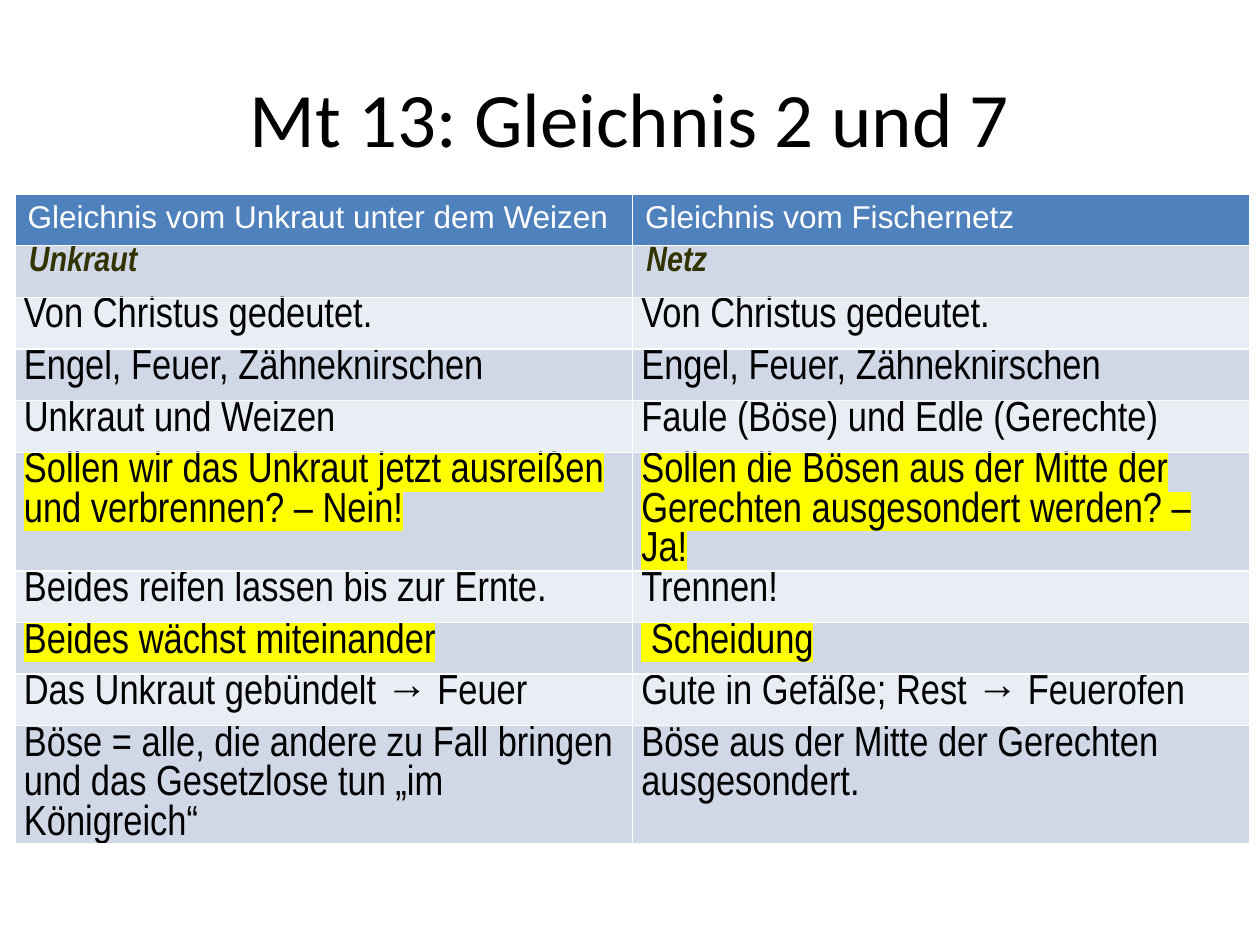
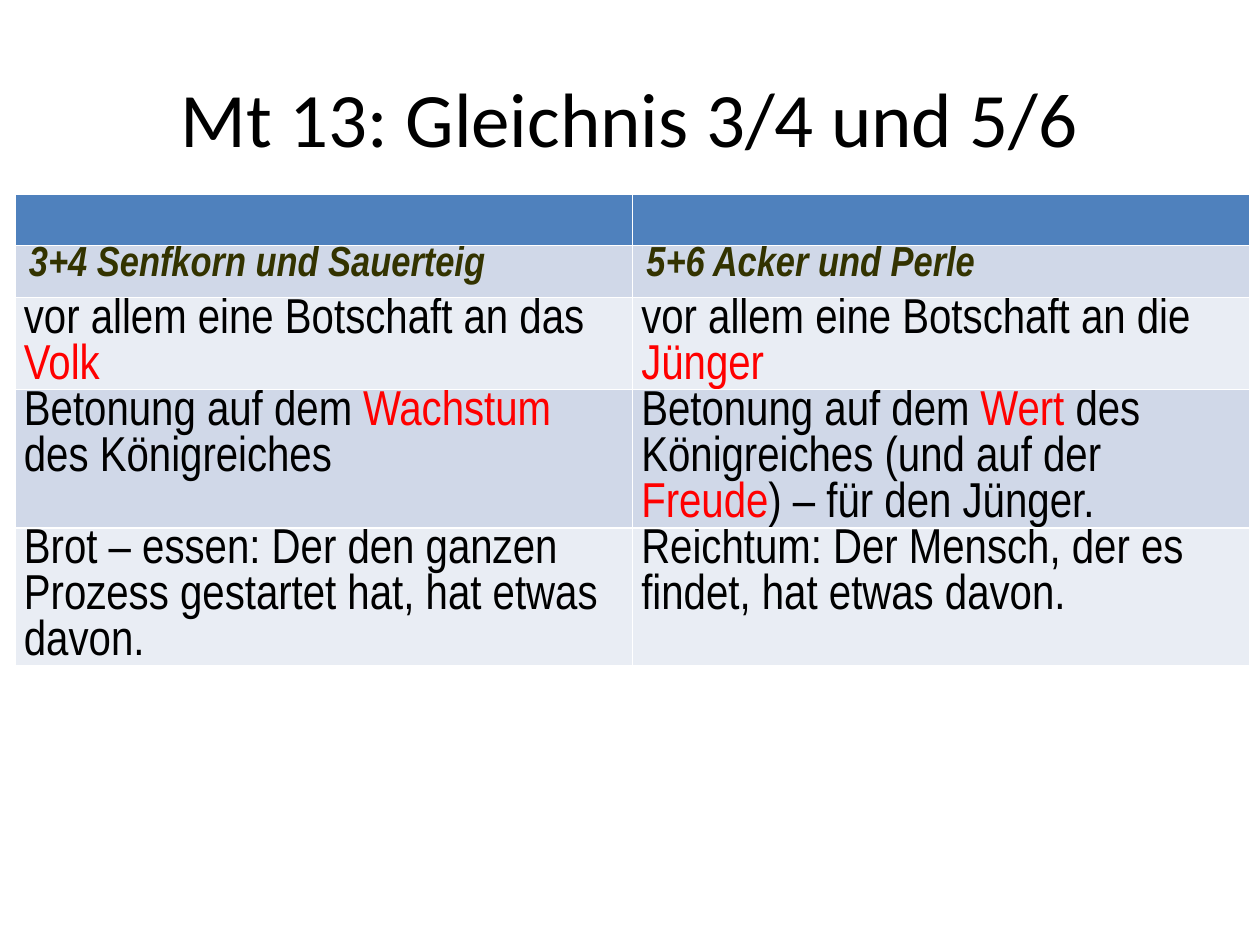
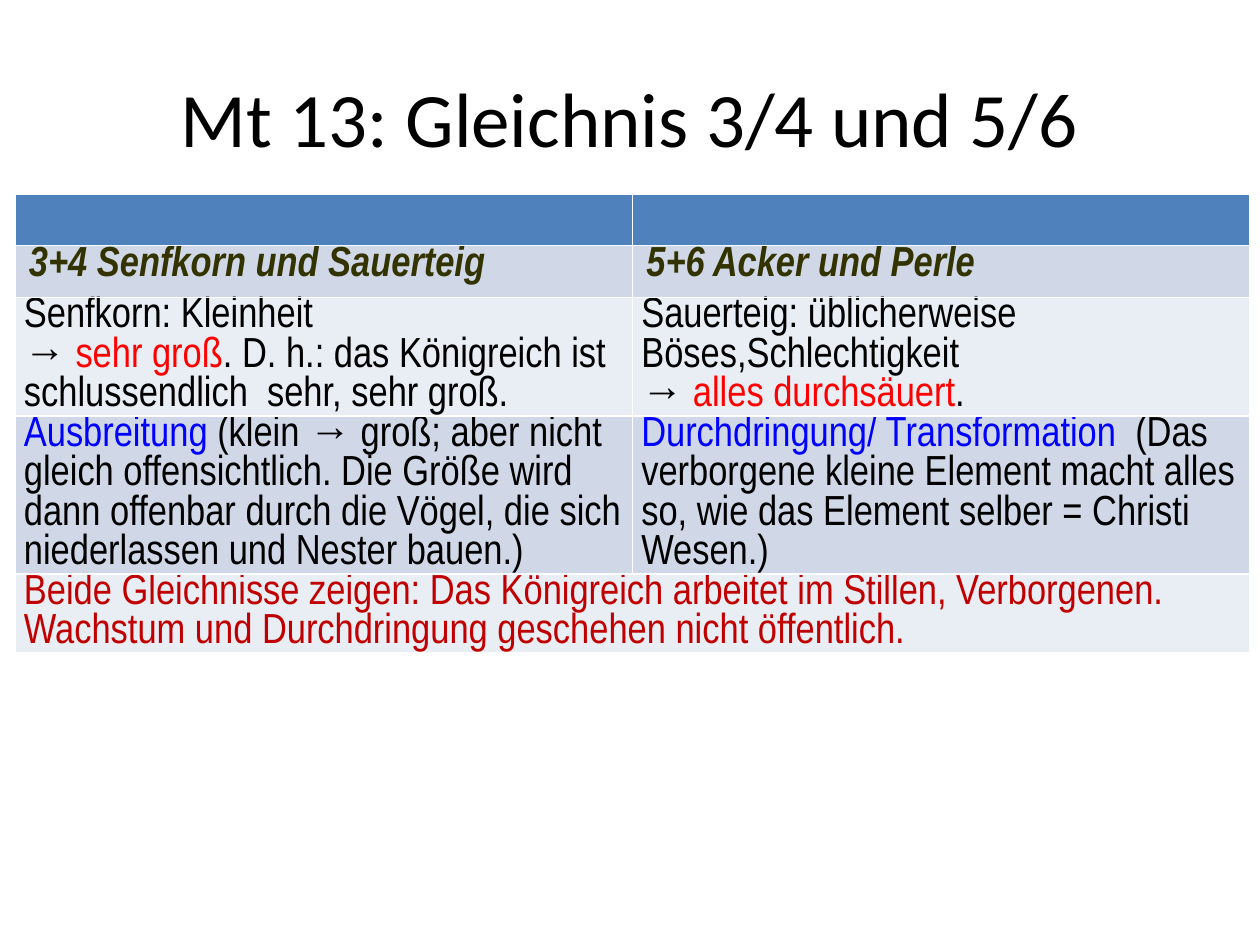
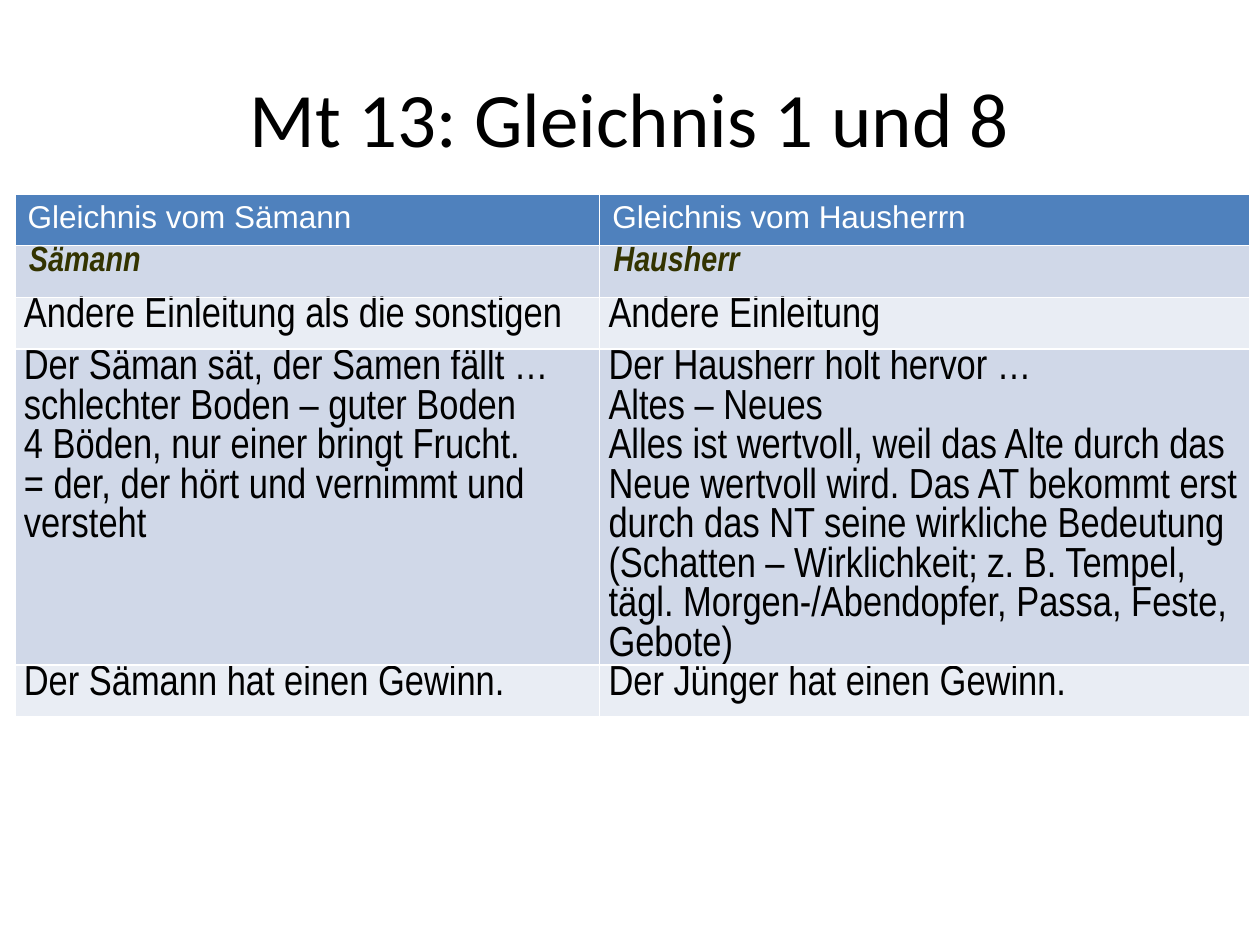
from dataclasses import dataclass

from lxml import etree
from pptx import Presentation
from pptx import util as u
from pptx.dml.color import RGBColor
from pptx.enum import text
from pptx.oxml.ns import qn


@dataclass(frozen=True)
class Theme:
    ink: str = "000000"
    white: str = "FFFFFF"
    header: str = "4F81BD"
    bands: tuple = ("D0D8E8", "E9EDF4")
    topic: str = "333300"
    red: str = "FF0000"
    blue: str = "0000FF"
    dark_red: str = "C00000"
    marker: str = "FFFF00"
    title_font: str = "Calibri"
    header_font: str = "Arial"
    body_font: str = "Arial Narrow"
    title_size: int = 44
    header_size: int = 18
    body_pitch: float = 0.94  # line height per point of type


THEME = Theme()


@dataclass(frozen=True)
class Span:
    words: str
    color: str = THEME.ink
    highlight: str = ""


def red(words):
    return Span(words, THEME.red)


def blue(words):
    return Span(words, THEME.blue)


def marked(words):
    return Span(words, highlight=THEME.marker)


# Content: a cell is one paragraph or a list of them; a tuple holds the runs
# of one paragraph; a row with a single cell spans the table.
EVEN = (4.9, 4.9)
GROWTH_TITLE = "Mt 13: Gleichnis 3/4 und 5/6"
GROWTH_TOPICS = ("3+4 Senfkorn und Sauerteig", "5+6 Acker und Perle")

SLIDES = [
    {
        "title": "Mt 13: Gleichnis 2 und 7",
        "columns": EVEN, "topic_size": 20, "body_size": 24,
        "header": ("Gleichnis vom Unkraut unter dem Weizen", "Gleichnis vom Fischernetz"),
        "topics": ("Unkraut", "Netz"),
        "body": [
            ["Von Christus gedeutet.", "Von Christus gedeutet."],
            ["Engel, Feuer, Zähneknirschen", "Engel, Feuer, Zähneknirschen"],
            ["Unkraut und Weizen", "Faule (Böse) und Edle (Gerechte)"],
            [marked("Sollen wir das Unkraut jetzt ausreißen und verbrennen? – Nein!"),
             marked("Sollen die Bösen aus der Mitte der Gerechten ausgesondert werden? – Ja!")],
            ["Beides reifen lassen bis zur Ernte.", "Trennen!"],
            [marked("Beides wächst miteinander"), marked(" Scheidung")],
            ["Das Unkraut gebündelt → Feuer", "Gute in Gefäße; Rest → Feuerofen"],
            ["Böse = alle, die andere zu Fall bringen und das Gesetzlose tun „im Königreich“",
             "Böse aus der Mitte der Gerechten ausgesondert."],
        ],
    },
    {
        "title": GROWTH_TITLE,
        "columns": EVEN, "topic_size": 24, "body_size": 28,
        "header": ("", ""),
        "topics": GROWTH_TOPICS,
        "body": [
            [("vor allem eine Botschaft an das ", red("Volk")),
             ("vor allem eine Botschaft an die ", red("Jünger"))],
            [("Betonung auf dem ", red("Wachstum"), " des Königreiches"),
             ("Betonung auf dem ", red("Wert"), " des Königreiches (und auf der ",
              red("Freude"), ") – für den Jünger.")],
            ["Brot – essen: Der den ganzen Prozess gestartet hat, hat etwas davon.",
             "Reichtum: Der Mensch, der es findet, hat etwas davon."],
        ],
    },
    {
        "title": GROWTH_TITLE,
        "columns": EVEN, "topic_size": 24, "body_size": 24,
        "header": ("", ""),
        "topics": GROWTH_TOPICS,
        "body": [
            [["Senfkorn: Kleinheit",
              ("→ ", red("sehr groß"),
               ". D. h.: das Königreich ist schlussendlich  sehr, sehr groß.")],
             ["Sauerteig: üblicherweise Böses,Schlechtigkeit",
              ("→ ", red("alles durchsäuert"), ".")]],
            [(blue("Ausbreitung "),
              "(klein → groß; aber nicht gleich offensichtlich. Die Größe wird dann "
              "offenbar durch die Vögel, die sich niederlassen und Nester bauen.)"),
             (blue("Durchdringung/ Transformation  "),
              "(Das verborgene kleine Element macht alles so, wie das Element selber "
              "= Christi Wesen.)")],
            [Span("Beide Gleichnisse zeigen: Das Königreich arbeitet im Stillen, "
                  "Verborgenen. Wachstum und Durchdringung geschehen nicht öffentlich.",
                  THEME.dark_red)],
        ],
    },
    {
        "title": "Mt 13: Gleichnis 1 und 8",
        "columns": (4.64, 5.16), "topic_size": 20, "body_size": 24,
        "header": ("Gleichnis vom Sämann", "Gleichnis vom Hausherrn"),
        "topics": ("Sämann", "Hausherr"),
        "body": [
            ["Andere Einleitung als die sonstigen", "Andere Einleitung"],
            [["Der Säman sät, der Samen fällt …",
              "schlechter Boden – guter Boden",
              "4 Böden, nur einer bringt Frucht.",
              "= der, der hört und vernimmt und versteht"],
             ["Der Hausherr holt hervor …",
              "Altes – Neues",
              "Alles ist wertvoll, weil das Alte durch das Neue wertvoll wird. Das AT "
              "bekommt erst durch das NT seine wirkliche Bedeutung",
              "(Schatten – Wirklichkeit; z. B. Tempel, tägl. Morgen-/Abendopfer, Passa, "
              "Feste, Gebote)"]],
            ["Der Sämann hat einen Gewinn.", "Der Jünger hat einen Gewinn."],
        ],
    },
]

# Geometry shared by all slides, in inches
TITLE_AREA = (0.5, 0.3, 9, 1.25)
TABLE_LEFT, TABLE_TOP = 0.12, 1.54
ROW_HEIGHT = 0.41
CELL_INSET = 0.07
TOPIC_INDENT = 0.04


def add_run(para, span, font, size, strong=False):
    run = para.add_run()
    run.text = span.words
    run.font.name = font
    run.font.size = u.Pt(size)
    run.font.bold = run.font.italic = strong
    run.font.color.rgb = RGBColor.from_string(span.color)
    if span.highlight:
        highlight = etree.Element(qn("a:highlight"))
        etree.SubElement(highlight, qn("a:srgbClr"), val=span.highlight)
        run._r.rPr.find(qn("a:solidFill")).addnext(highlight)


def write_cell(cell, content, font, size, strong=False, pitch=None):
    paragraphs = content if isinstance(content, list) else [content]
    frame = cell.text_frame
    for index, pieces in enumerate(paragraphs):
        para = frame.add_paragraph() if index else frame.paragraphs[0]
        if pitch:
            para.line_spacing = u.Pt(size * pitch)
        for piece in pieces if isinstance(pieces, tuple) else (pieces,):
            span = piece if isinstance(piece, Span) else Span(piece)
            if span.words:
                add_run(para, span, font, size, strong)


def style_cell(cell, fill):
    cell.fill.solid()
    cell.fill.fore_color.rgb = RGBColor.from_string(fill)
    props = cell._tc.get_or_add_tcPr()
    for place, side in enumerate("LRTB"):
        line = etree.Element(qn(f"a:ln{side}"), w=str(u.Pt(1)))
        paint = etree.SubElement(line, qn("a:solidFill"))
        etree.SubElement(paint, qn("a:srgbClr"), val=THEME.white)
        props.insert(place, line)


def add_title(slide, words):
    box = slide.shapes.add_textbox(*map(u.Inches, TITLE_AREA))
    frame = box.text_frame
    frame.word_wrap = True
    frame.vertical_anchor = text.MSO_ANCHOR.MIDDLE
    para = frame.paragraphs[0]
    para.alignment = text.PP_ALIGN.CENTER
    add_run(para, Span(words), THEME.title_font, THEME.title_size)


def add_comparison(slide, content):
    columns = content["columns"]
    rows = [content["header"], content["topics"], *content["body"]]
    table = slide.shapes.add_table(
        len(rows), len(columns), u.Inches(TABLE_LEFT), u.Inches(TABLE_TOP),
        u.Inches(sum(columns)), u.Inches(ROW_HEIGHT * len(rows))).table
    for column, width in zip(table.columns, columns):
        column.width = u.Inches(width)

    for number, row in enumerate(rows):
        table.rows[number].height = u.Inches(ROW_HEIGHT)
        if len(row) < len(columns):
            table.cell(number, 0).merge(table.cell(number, len(columns) - 1))
        for cell in table.rows[number].cells:
            if number == 0:
                style_cell(cell, THEME.header)
            else:
                style_cell(cell, THEME.bands[(number - 1) % 2])
                cell.margin_left = cell.margin_right = u.Inches(CELL_INSET)
                cell.margin_top = cell.margin_bottom = 0
        for cell, item in zip(table.rows[number].cells, row):
            if number == 0:
                write_cell(cell, Span(item, THEME.white), THEME.header_font, THEME.header_size)
            elif number == 1:
                write_cell(cell, Span(item, THEME.topic), THEME.body_font,
                           content["topic_size"], strong=True)
                para = cell.text_frame.paragraphs[0]
                para.space_before = u.Pt(6)
                para._p.get_or_add_pPr().set("marL", str(u.Inches(TOPIC_INDENT)))
            else:
                write_cell(cell, item, THEME.body_font, content["body_size"],
                           pitch=THEME.body_pitch)


def main():
    deck = Presentation()
    deck.slide_width, deck.slide_height = u.Inches(10), u.Inches(7.5)
    for content in SLIDES:
        slide = deck.slides.add_slide(deck.slide_layouts[6])
        add_title(slide, content["title"])
        add_comparison(slide, content)
    deck.save("out.pptx")


if __name__ == "__main__":
    main()
